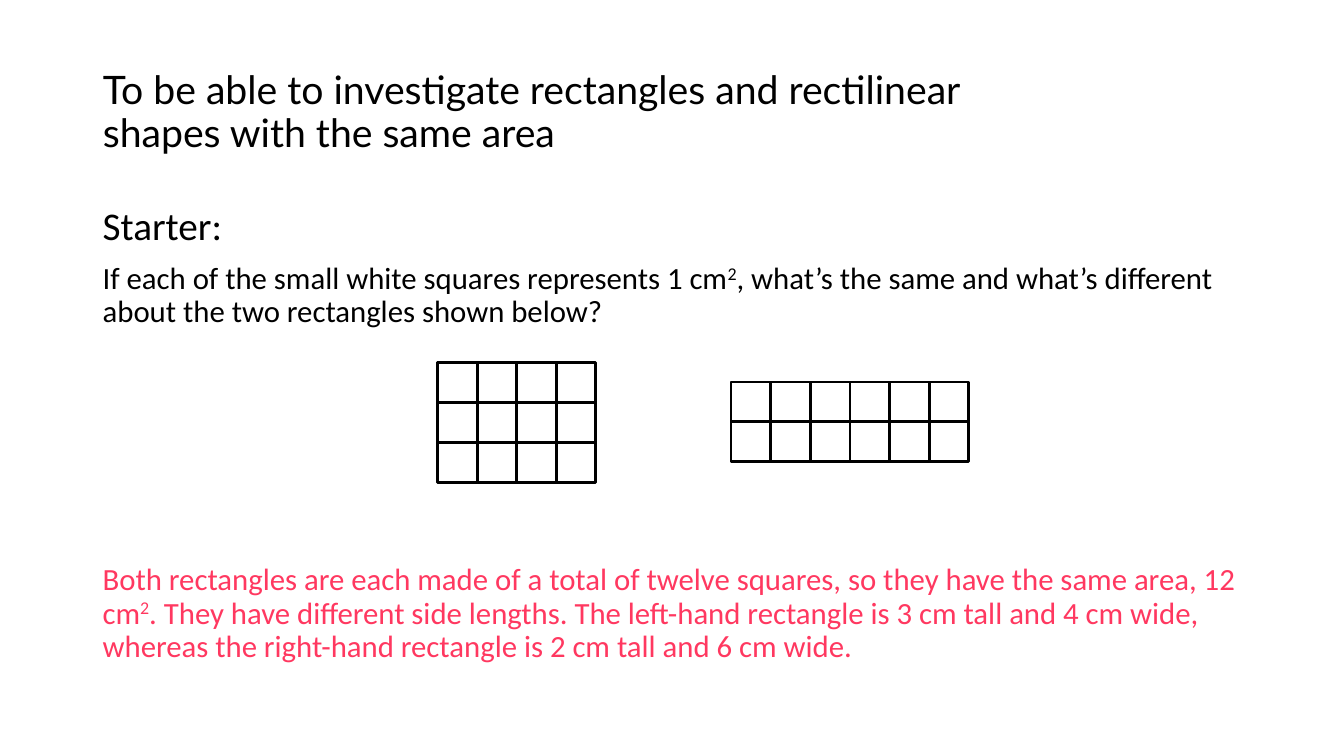
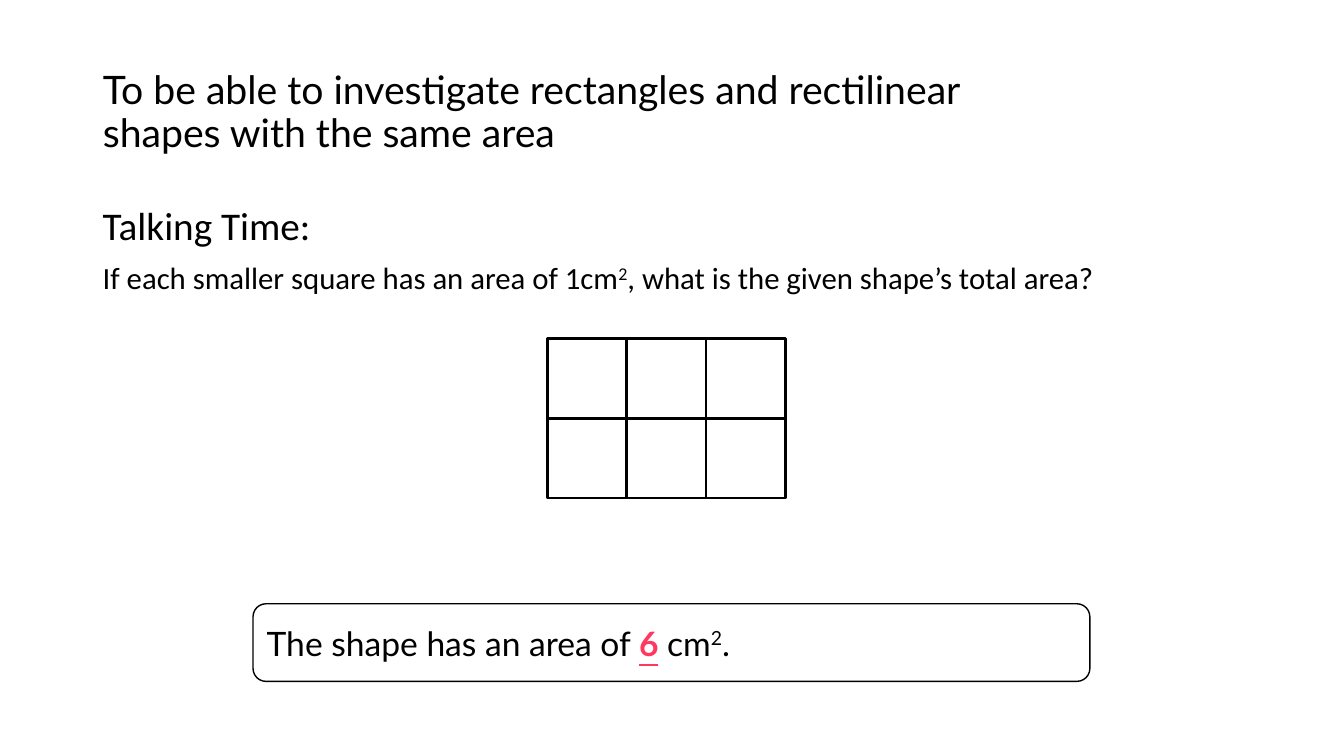
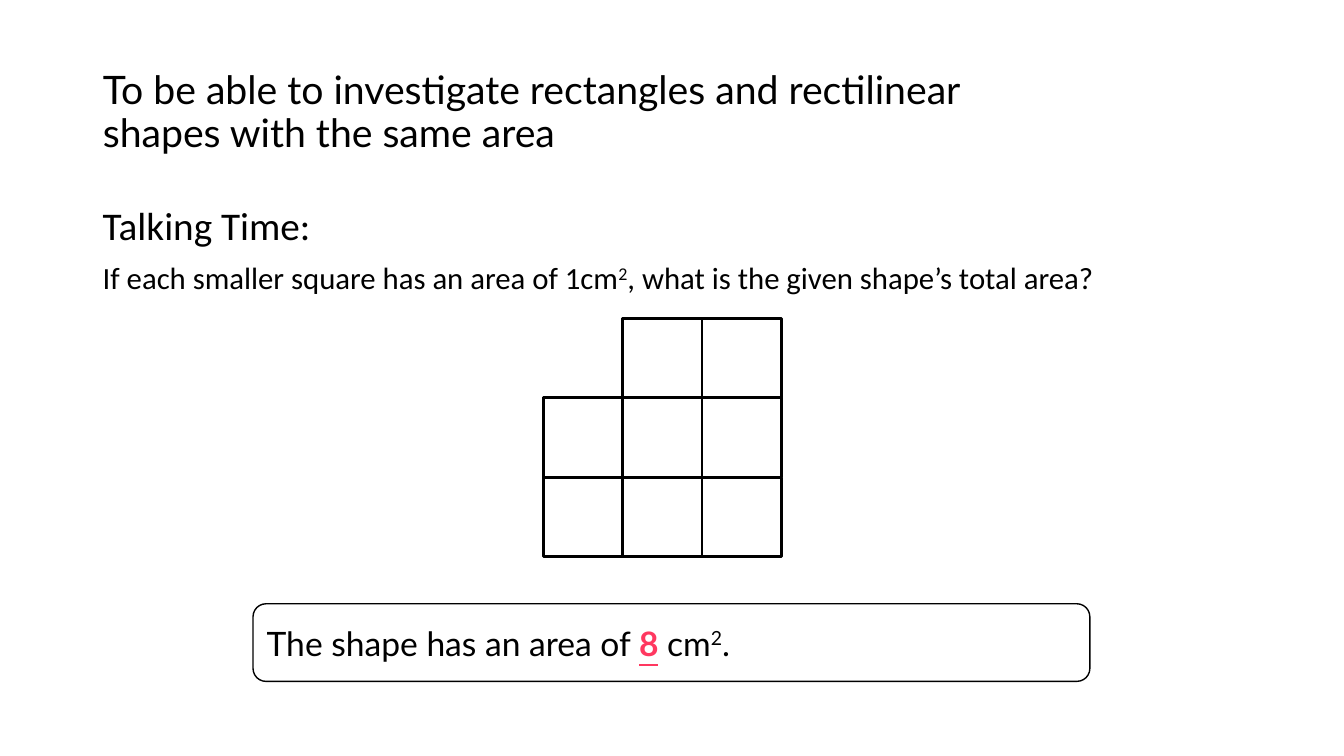
from pptx import Presentation
from pptx.dml.color import RGBColor
from pptx.enum import shapes, text
from pptx.util import Inches, Pt

COLOURS = {"ink": "000000", "paper": "FFFFFF", "answer": "FF3860"}
SLIDE_SIZE = (13.33, 7.5)
TITLE_AREA = (0.92, 0.4, 9.6, 1.45)
ANSWER_AREA = (0.92, 5.55, 11.94, 1.21)
SENTENCE_AREA = (2.51, 5.99, 8.3, 0.77)
BODY_LEFT, BODY_TOP, BODY_HEIGHT = 0.92, 2, 1.5

TITLE = "To be able to investigate rectangles and rectilinear shapes with the same area"
SQUARED = ("2", {"raised": True})
TALKING_QUESTION = [
    "If each smaller square has an area of 1cm", SQUARED,
    ", what is the given shape’s total area?",
]

LESSON = [
    {
        "heading": "Starter:",
        "question": [
            "If each of the small white squares represents 1 cm", SQUARED,
            ", what’s the same and what’s different about the two rectangles shown below?",
        ],
        "body_width": 11.94,
        "grids": [
            ((4.34, 3.6, 1.57, 1.19), ["####"] * 3),
            ((7.25, 3.79, 2.36, 0.79), ["######"] * 2),
        ],
        "answer": [
            "Both rectangles are each made of a total of twelve squares, "
            "so they have the same area, 12 cm", SQUARED,
            ". They have different side lengths. The left-hand rectangle is 3 cm tall "
            "and 4 cm wide, whereas the right-hand rectangle is 2 cm tall and 6 cm wide.",
        ],
    },
    {
        "heading": "Talking Time:",
        "question": TALKING_QUESTION,
        "body_width": 11.71,
        "grids": [((5.43, 3.36, 2.36, 1.58), ["###"] * 2)],
        "area": "6",
    },
    {
        "heading": "Talking Time:",
        "question": TALKING_QUESTION,
        "body_width": 11.71,
        "grids": [((5.39, 3.16, 2.36, 2.36), [".##", "###", "###"])],
        "area": "8",
    },
]


def colour(name):
    return RGBColor.from_string(COLOURS[name])


def write(paragraph, parts, size, font="Calibri", ink="ink", spacing=0.9, before=0):
    paragraph.alignment = text.PP_ALIGN.LEFT
    paragraph.line_spacing = spacing
    paragraph.space_before = Pt(before)
    for part in parts:
        words, style = (part, {}) if isinstance(part, str) else part
        run = paragraph.add_run()
        run.text = words
        run.font.name = font
        run.font.size = Pt(size)
        run.font.color.rgb = colour(style.get("ink", ink))
        if style.get("strong"):
            run.font.bold = run.font.underline = True
        if style.get("raised"):
            run._r.get_or_add_rPr().set("baseline", "30000")


def prepare_frame(shape, anchor):
    frame = shape.text_frame
    frame.word_wrap = True
    frame.auto_size = text.MSO_AUTO_SIZE.NONE
    frame.vertical_anchor = anchor
    return frame


def add_title(slide):
    title = slide.shapes.title
    title.left, title.top, title.width, title.height = map(Inches, TITLE_AREA)
    frame = prepare_frame(title, text.MSO_ANCHOR.MIDDLE)
    write(frame.paragraphs[0], [TITLE], 28, font="Lato")


def add_text_area(slide, area):
    box = slide.shapes.add_textbox(*map(Inches, area))
    return prepare_frame(box, text.MSO_ANCHOR.TOP)


def add_outlined(slide, kind, area, line_width):
    shape = slide.shapes.add_shape(kind, *map(Inches, area))
    shape.shadow.inherit = False
    shape.fill.solid()
    shape.fill.fore_color.rgb = colour("paper")
    shape.line.color.rgb = colour("ink")
    shape.line.width = Pt(line_width)
    return shape


def add_grid(slide, area, rows):
    left, top, width, height = area
    cell_width, cell_height = width / len(rows[0]), height / len(rows)
    for row, marks in enumerate(rows):
        for column, mark in enumerate(marks):
            if mark == "#":
                cell = (left + column * cell_width, top + row * cell_height,
                        cell_width, cell_height)
                add_outlined(slide, shapes.MSO_SHAPE.RECTANGLE, cell, 2)


def add_area_sentence(slide, area):
    box = add_outlined(slide, shapes.MSO_SHAPE.ROUNDED_RECTANGLE, SENTENCE_AREA, 1)
    frame = prepare_frame(box, text.MSO_ANCHOR.MIDDLE)
    parts = ["The shape has an area of ", (area, {"ink": "answer", "strong": True}),
             " cm", SQUARED, "."]
    write(frame.paragraphs[0], parts, 24, font="Lato", spacing=1.0)


def add_lesson_slide(presentation, content):
    slide = presentation.slides.add_slide(presentation.slide_layouts[5])
    add_title(slide)
    body = add_text_area(slide, (BODY_LEFT, BODY_TOP, content["body_width"], BODY_HEIGHT))
    write(body.paragraphs[0], [content["heading"]], 28)
    write(body.add_paragraph(), content["question"], 22, before=10)
    for area, rows in content["grids"]:
        add_grid(slide, area, rows)
    if "answer" in content:
        answer = add_text_area(slide, ANSWER_AREA)
        write(answer.paragraphs[0], content["answer"], 22, ink="answer")
    if "area" in content:
        add_area_sentence(slide, content["area"])


def main():
    presentation = Presentation()
    presentation.slide_width, presentation.slide_height = map(Inches, SLIDE_SIZE)
    for content in LESSON:
        add_lesson_slide(presentation, content)
    presentation.save("out.pptx")


if __name__ == "__main__":
    main()
